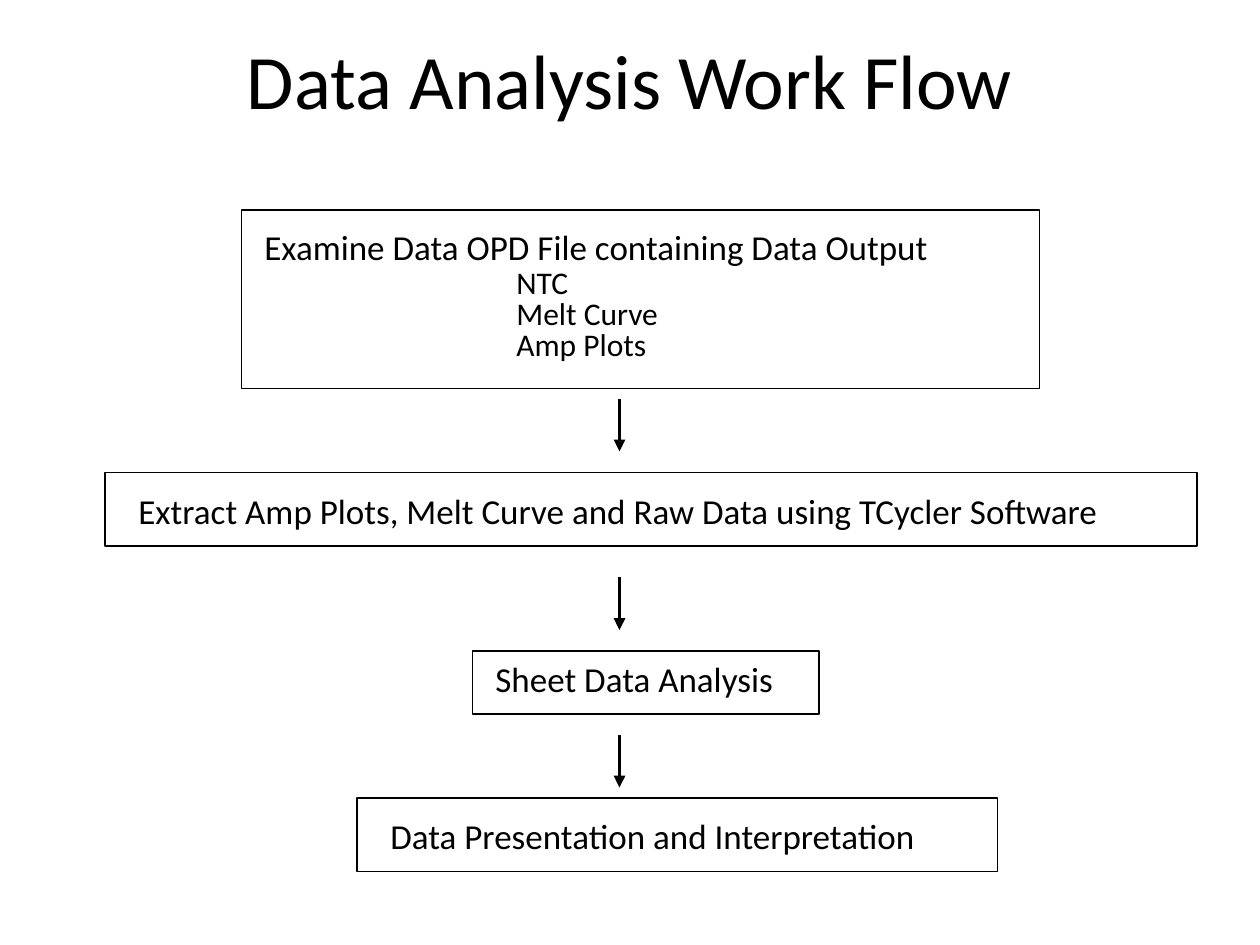
from pptx import Presentation
from pptx.dml.color import RGBColor
from pptx.enum.shapes import MSO_CONNECTOR, MSO_SHAPE
from pptx.enum.text import MSO_ANCHOR, PP_ALIGN
from pptx.oxml.ns import qn
from pptx.util import Pt
from lxml import etree

RECT = MSO_SHAPE.RECTANGLE
LINE = MSO_CONNECTOR.STRAIGHT
MIDDLE, TOP = MSO_ANCHOR.MIDDLE, MSO_ANCHOR.TOP
CENTER, LEFT = PP_ALIGN.CENTER, PP_ALIGN.LEFT

SCALE = 7620  # EMU per px, 120 px to the inch
COLORS = {"ink": "000000", "page": "FFFFFF"}
FONT = "Calibri"

# Formats of the paragraphs
HEAD = {"alignment": CENTER}
STEP = {"alignment": LEFT}
LEAD = {"alignment": LEFT, "line_spacing": 0.7}
ITEM = {"alignment": LEFT, "line_spacing": 0.4, "space_before": Pt(9)}


def px(*vals):
    return [v * SCALE for v in vals]


def ink(name):
    return RGBColor.from_string(COLORS[name])


def add_text(slide, box, lines, anchor=TOP):
    """Lines are (text, size, format, indent in px)."""
    frame = slide.shapes.add_textbox(*px(*box)).text_frame
    frame.word_wrap = True
    frame.vertical_anchor = anchor
    for i, (text, size, form, indent) in enumerate(lines):
        para = frame.paragraphs[0] if i == 0 else frame.add_paragraph()
        for key, val in form.items():
            setattr(para, key, val)
        if indent:
            para._p.get_or_add_pPr().set("marL", str(indent * SCALE))
        run = para.add_run()
        run.text = text
        for key, val in {"name": FONT, "size": Pt(size)}.items():
            setattr(run.font, key, val)
        run.font.color.rgb = ink("ink")


def add_step(slide, box, inset, lines):
    """A framed step; inset is left, top, width, height of its text."""
    x, y, w, h = box
    dx, dy, tw, th = inset
    add_text(slide, (x + dx, y + dy, tw, th), lines)
    rect = slide.shapes.add_shape(RECT, *px(x, y, w, h))
    rect.shadow.inherit = False
    rect.fill.background()
    rect.line.color.rgb = ink("ink")
    rect.line.width = Pt(0.75)


def add_arrow(slide, x, y, size):
    link = slide.shapes.add_connector(LINE, *px(x, y, x, y + size))
    link.line.color.rgb = ink("ink")
    link.line.width = Pt(2.25)
    etree.SubElement(link.line._get_or_add_ln(), qn("a:tailEnd"), type="triangle")
    etree.SubElement(link._element.spPr, qn("a:effectLst"))


def add_flow(slide, box):
    x, y = box[:2]
    items = [(text, 18, ITEM, 240) for text in ("NTC", "Melt Curve", "Amp Plots")]
    # Each step: frame within the flow, text inset, lines
    steps = [
        ((130, 0, 760, 170), (10, 20, 750, 138),
         [("Examine Data OPD File containing Data Output", 20, LEAD, 0)] + items),
        ((0, 250, 1040, 70), (20, 10, 1080, 60),
         [("Extract Amp Plots, Melt Curve and Raw Data using TCycler Software",
           20, STEP, 0)]),
        ((350, 420, 330, 60), (10, 0, 320, 52),
         [("Sheet Data Analysis", 20, STEP, 0)]),
        ((240, 560, 610, 70), (20, 10, 590, 52),
         [("Data Presentation and Interpretation", 20, STEP, 0)]),
    ]
    for (left, top, w, h), inset, lines in steps:
        add_step(slide, (x + left, y + top, w, h), inset, lines)
    for top in (180, 350, 500):
        add_arrow(slide, x + 490, y + top, 50)


def main():
    prs = Presentation()
    prs.slide_width, prs.slide_height = px(1200, 900)
    slide = prs.slides.add_slide(prs.slide_layouts[6])
    slide.background.fill.solid()
    slide.background.fill.fore_color.rgb = ink("page")
    # Title
    add_text(slide, (60, 0, 1080, 150),
             [("Data Analysis Work Flow", 44, HEAD, 0)], MIDDLE)
    # Work flow
    add_flow(slide, (100, 200, 1040, 630))
    prs.save("out.pptx")


if __name__ == "__main__":
    main()
